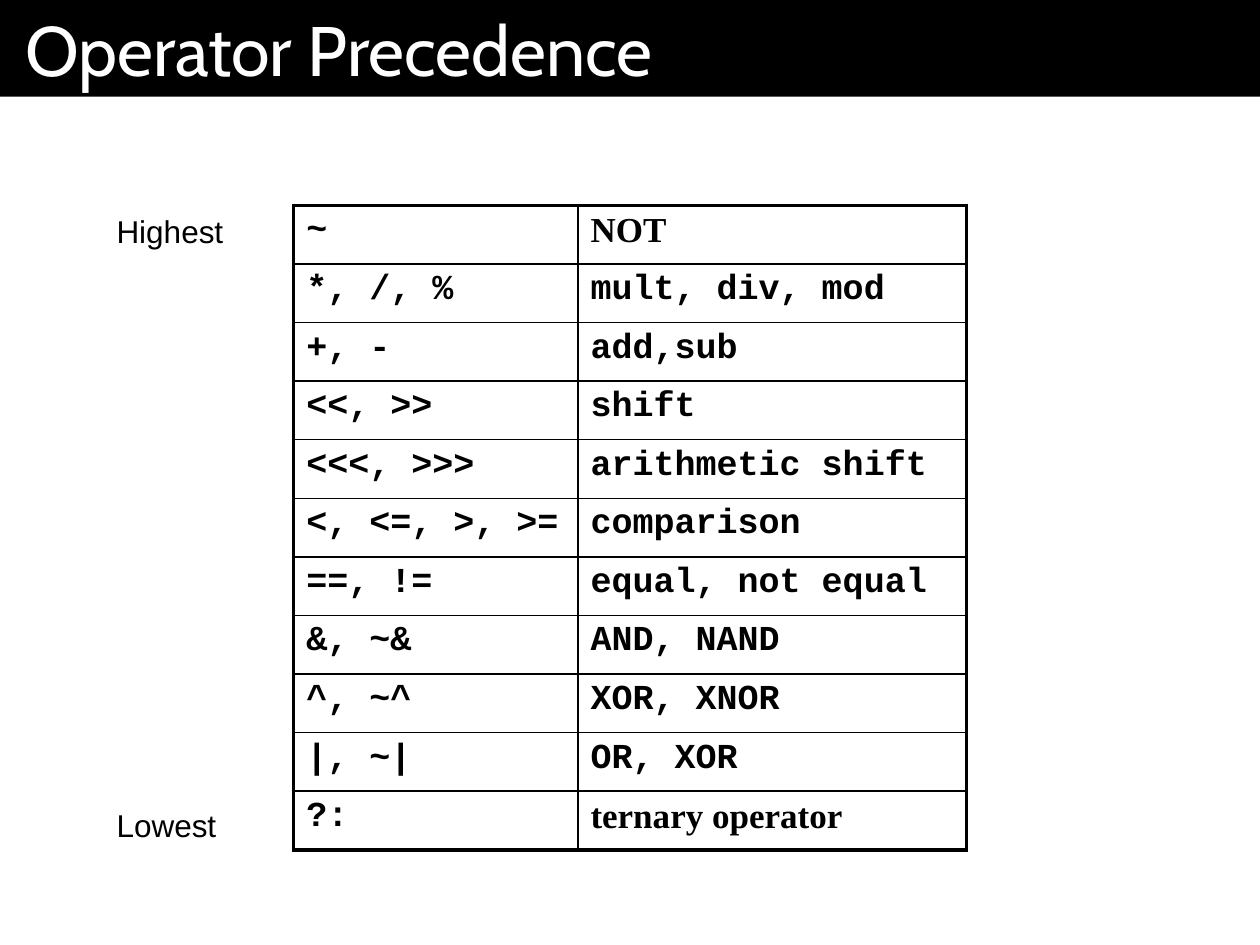
from lxml import etree
from pptx import Presentation
from pptx import util as u
from pptx.dml.color import RGBColor
from pptx.enum import shapes, text
from pptx.oxml.ns import qn

COLORS = {"black": "000000", "white": "FFFFFF"}
MONO, SERIF, SANS, TITLE = "Courier New", "Times New Roman", "Arial", "Cabin"
THIN, THICK = 1, 2.25

# Highest precedence first
OPERATORS = [
    ("~", "NOT"),
    ("*, /, %", "mult, div, mod"),
    ("+, -", "add,sub"),
    ("<<, >>", "shift"),
    ("<<<, >>>", "arithmetic shift"),
    ("<, <=, >, >=", "comparison"),
    ("==, !=", "equal, not equal"),
    ("&, ~&", "AND, NAND"),
    ("^, ~^", "XOR, XNOR"),
    ("|, ~|", "OR, XOR"),
    ("?:", "ternary operator"),
]
SERIF_MEANINGS = {"NOT", "ternary operator"}


def rgb(name):
    return RGBColor.from_string(COLORS[name])


def write(tf, content, font=SANS, size=18, color="black", bold=False):
    p = tf.paragraphs[0]
    p.alignment = text.PP_ALIGN.LEFT
    r = p.add_run()
    r.text = content
    r.font.name = font
    r.font.size = u.Pt(size)
    r.font.bold = bold
    r.font.color.rgb = rgb(color)


def add_title_bar(s, content, width):
    sp = s.shapes.add_shape(shapes.MSO_SHAPE.RECTANGLE, 0, 0, width, u.Cm(1.95))
    sp.shadow.inherit = False
    sp.fill.solid()
    sp.fill.fore_color.rgb = rgb("black")
    sp.line.fill.background()
    tf = sp.text_frame
    tf.word_wrap = True
    tf.margin_left = tf.margin_right = u.Cm(0.51)
    tf.vertical_anchor = text.MSO_ANCHOR.MIDDLE
    write(tf, content, font=TITLE, size=40, color="white")


def add_label(s, content, top):
    sp = s.shapes.add_textbox(u.Cm(2.1), u.Cm(top), u.Cm(4.88), u.Cm(1.02))
    tf = sp.text_frame
    tf.word_wrap = True
    tf.vertical_anchor = text.MSO_ANCHOR.MIDDLE
    write(tf, content)


def set_borders(cell, **widths):
    """Draw solid black cell edges, given in points as L, R, T and B."""
    tc_pr = cell._tc.get_or_add_tcPr()
    for i, side in enumerate("LRTB"):
        ln = etree.Element(qn(f"a:ln{side}"), w=str(u.Pt(widths[side])))
        fill = etree.SubElement(ln, qn("a:solidFill"))
        etree.SubElement(fill, qn("a:srgbClr"), val=COLORS["black"])
        tc_pr.insert(i, ln)


def add_operator_table(s):
    """Table with thin inner lines and a thick outer frame."""
    n = len(OPERATORS)
    table = s.shapes.add_table(n, 2, u.Cm(5.92), u.Cm(4.14), u.Cm(13.56), u.Cm(13)).table
    table.first_row = table.horz_banding = False
    for col, width in zip(table.columns, (5.73, 7.83)):
        col.width = u.Cm(width)
    for i, row in enumerate(OPERATORS):
        for j, content in enumerate(row):
            cell = table.cell(i, j)
            cell.fill.background()
            font = SERIF if content in SERIF_MEANINGS else MONO
            write(cell.text_frame, content, font=font, size=20, bold=True)
            set_borders(
                cell,
                L=THICK if j == 0 else THIN,
                R=THICK if j == 1 else THIN,
                T=THICK if i == 0 else THIN,
                B=THICK if i == n - 1 else THIN,
            )


def main():
    prs = Presentation()
    prs.slide_width, prs.slide_height = u.Cm(25.4), u.Cm(19.05)
    s = prs.slides.add_slide(prs.slide_layouts[6])
    add_title_bar(s, "Operator Precedence", prs.slide_width)
    add_operator_table(s)
    add_label(s, "Highest", 4.14)
    add_label(s, "Lowest", 16.13)
    prs.save("out.pptx")


if __name__ == "__main__":
    main()
